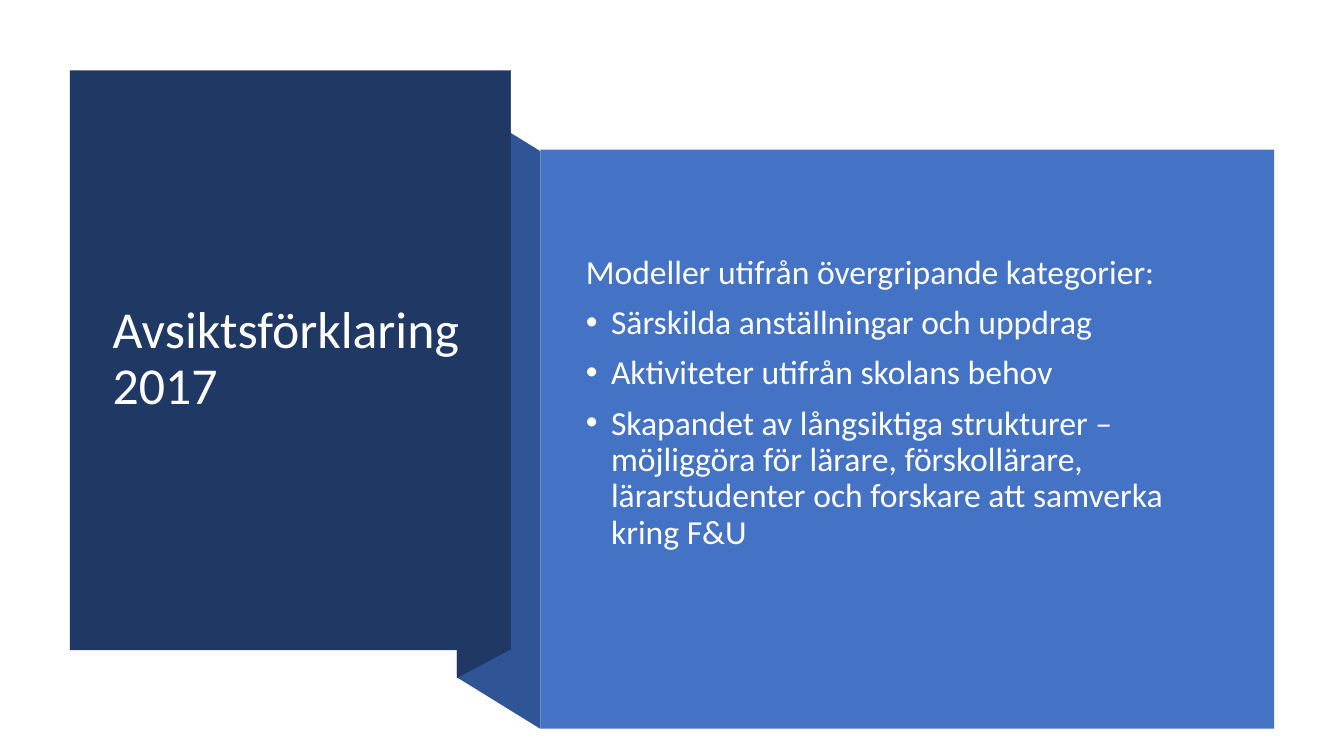
from dataclasses import dataclass

from lxml.etree import SubElement
from pptx import Presentation
from pptx.dml.color import RGBColor
from pptx.enum.shapes import MSO_SHAPE
from pptx.enum.text import MSO_ANCHOR
from pptx.oxml.ns import qn
from pptx.util import Inches, Pt


@dataclass(frozen=True)
class Theme:
    font: str = "Calibri"
    navy: str = "203864"
    fold: str = "2F5597"
    blue: str = "4472C4"
    title_color: str = "FFFFFF"
    body_color: str = "FEFFFF"
    title_size: int = 37
    body_size: int = 24
    line_spacing: float = 0.9
    space_before: int = 10
    bullet_indent: float = 0.25


class SlideBuilder:
    """Places elements on a grid of 100 columns by 100 rows."""

    def __init__(self, presentation, theme):
        self.theme = theme
        self.column = presentation.slide_width / 100
        self.row = presentation.slide_height / 100
        self.slide = presentation.slides.add_slide(presentation.slide_layouts[6])

    def place(self, column, row):
        return round(column * self.column), round(row * self.row)

    def paint(self, shape, color):
        shape.shadow.inherit = False
        shape.fill.solid()
        shape.fill.fore_color.rgb = RGBColor.from_string(color)
        shape.line.fill.background()

    def rectangle(self, left, top, width, height, color):
        shape = self.slide.shapes.add_shape(
            MSO_SHAPE.RECTANGLE, *self.place(left, top), *self.place(width, height))
        self.paint(shape, color)

    def polygon(self, corners, color):
        start, *others = [self.place(*corner) for corner in corners]
        builder = self.slide.shapes.build_freeform(*start)
        builder.add_line_segments(others, close=True)
        self.paint(builder.convert_to_shape(), color)

    def text(self, left, top, width, height, lines, size, color, space_before=0):
        shape = self.slide.shapes.add_textbox(
            *self.place(left, top), *self.place(width, height))
        text_frame = shape.text_frame
        text_frame.word_wrap = True
        text_frame.vertical_anchor = MSO_ANCHOR.MIDDLE
        text_frame.text = "\n".join(lines)
        for paragraph in text_frame.paragraphs:
            paragraph.line_spacing = self.theme.line_spacing
            paragraph.space_before = Pt(space_before)
            for run in paragraph.runs:
                run.font.name = self.theme.font
                run.font.size = Pt(size)
                run.font.color.rgb = RGBColor.from_string(color)
        return text_frame

    def bullet(self, paragraph):
        indent = Inches(self.theme.bullet_indent)
        properties = paragraph._p.get_or_add_pPr()
        properties.set("marL", str(indent))
        properties.set("indent", str(-indent))
        SubElement(properties, qn("a:buFont")).set("typeface", "Arial")
        SubElement(properties, qn("a:buChar")).set("char", "•")


def main():
    presentation = Presentation()
    presentation.slide_width = Inches(13.33)
    presentation.slide_height = Inches(7.5)
    theme = Theme()
    builder = SlideBuilder(presentation, theme)

    # Folded ribbon behind the two panels
    fold_left, title_right, body_left = 34, 38, 40.2
    builder.polygon([(body_left, 96.4), (fold_left, 89.6),
                     (fold_left, 13.2), (body_left, 20)], theme.fold)
    builder.polygon([(title_right, 85.9), (fold_left, 89.7),
                     (fold_left, 13.1), (title_right, 9.3)], theme.navy)

    # Title panel
    builder.rectangle(5.2, 9.3, title_right - 5.2, 76.7, theme.navy)
    builder.text(7.65, 14.3, 27.8, 66.5, ["Avsiktsförklaring 2017"],
                 theme.title_size, theme.title_color)

    # Body panel
    builder.rectangle(body_left, 19.8, 54.6, 76.6, theme.blue)
    body = builder.text(42.85, 25.1, 48.8, 56.5, [
        "Modeller utifrån övergripande kategorier:",
        "Särskilda anställningar och uppdrag",
        "Aktiviteter utifrån skolans behov",
        "Skapandet av långsiktiga strukturer – möjliggöra för lärare, "
        "förskollärare, lärarstudenter och forskare att samverka kring F&U",
    ], theme.body_size, theme.body_color, theme.space_before)
    for paragraph in body.paragraphs[1:]:
        builder.bullet(paragraph)

    presentation.save("out.pptx")


if __name__ == "__main__":
    main()
